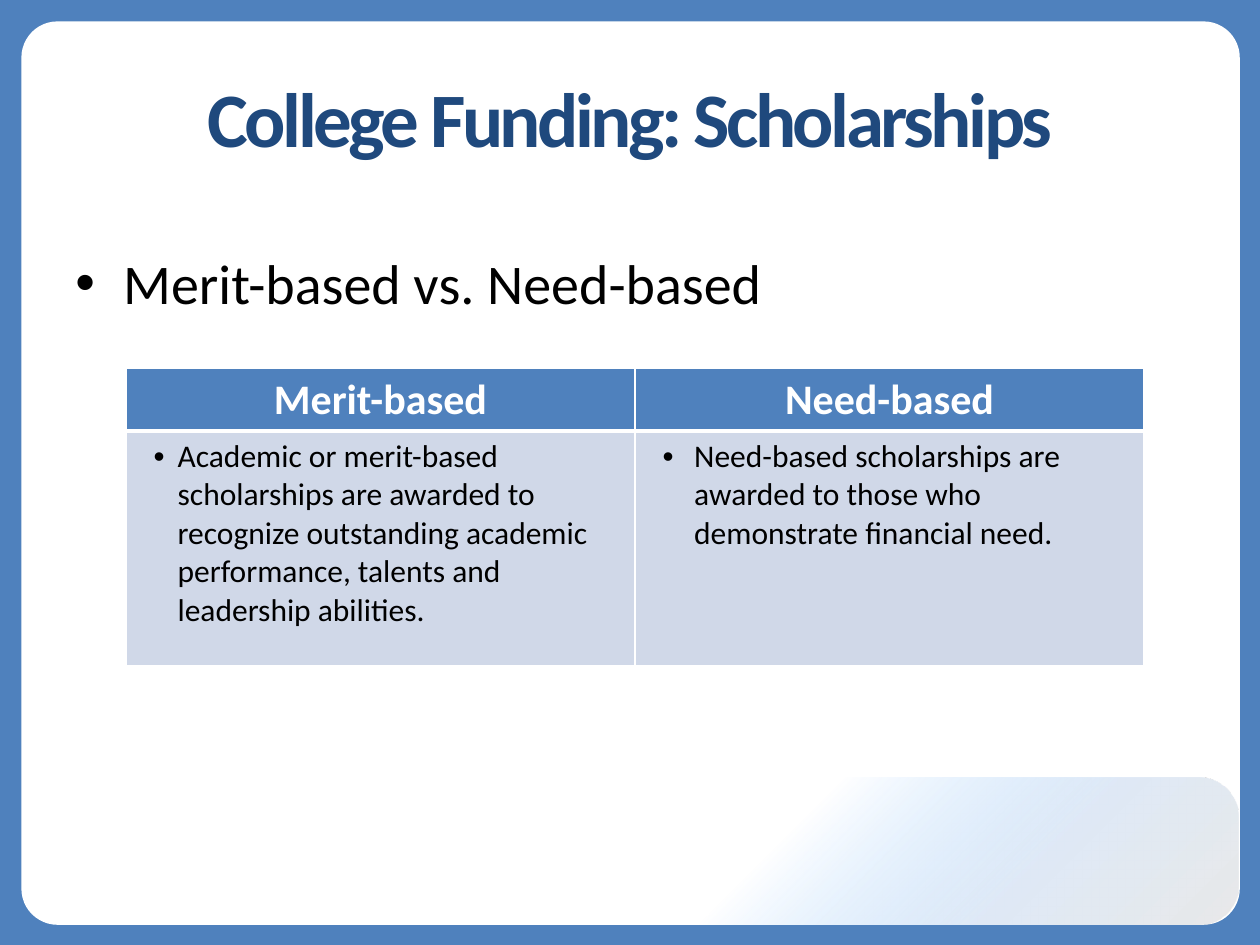
"""Build the scholarships slide comparing merit-based and need-based funding."""
from dataclasses import dataclass
from typing import Optional

from lxml.etree import SubElement
from pptx import Presentation
from pptx.dml.color import RGBColor
from pptx.enum.shapes import MSO_SHAPE as Shape
from pptx.enum.text import MSO_ANCHOR as Anchor, PP_ALIGN as Align
from pptx.oxml import parse_xml
from pptx.oxml.ns import nsdecls, qn
from pptx.util import Inches, Pt

BLUE = RGBColor(0x4F, 0x81, 0xBD)
NAVY = RGBColor(0x1F, 0x49, 0x7D)
PALE = RGBColor(0xD0, 0xD8, 0xE8)
WHITE = RGBColor(0xFF, 0xFF, 0xFF)
BLACK = RGBColor(0, 0, 0)
FONT = "Calibri"
GLOW_STOPS = ((0, "FFFFFF", 0), (40, "85C2FF", 0), (70, "C6D9F1", 56), (100, "D9D9D9", 58))


@dataclass(frozen=True)
class Panel:
    box: tuple
    kind: Shape
    fill: Optional[RGBColor] = None
    radius: Optional[float] = None


@dataclass(frozen=True)
class Style:
    size: int
    color: RGBColor
    bold: bool = False
    align: Align = Align.LEFT


@dataclass(frozen=True)
class Column:
    heading: str
    detail: str
    margin: float
    hang: float


PANELS = (
    Panel((0, 0, 10, 7.5), Shape.RECTANGLE, BLUE),
    Panel((0.17, 0.17, 9.67, 7.17), Shape.ROUNDED_RECTANGLE, WHITE, 0.04),
    Panel((3.83, 6.17, 6, 1.17), Shape.ROUNDED_RECTANGLE, None, 0.27),
)
COLUMNS = (
    Column("Merit-based", "Academic or merit-based scholarships are awarded to recognize "
           "outstanding academic performance, talents and leadership abilities.", 0.31, 0.19),
    Column("Need-based", "Need-based scholarships are awarded to those who demonstrate "
           "financial need.", 0.37, 0.25),
)
TITLE = Style(44, NAVY, True, Align.CENTER)
LEAD = Style(32, BLACK)
HEADING = Style(24, WHITE, True, Align.CENTER)
DETAIL = Style(18, BLACK)


def add_panel(s, panel: Panel) -> None:
    sp = s.shapes.add_shape(panel.kind, *map(Inches, panel.box))
    sp.shadow.inherit = False
    sp.line.fill.background()
    if panel.radius is not None:
        sp.adjustments[0] = panel.radius
    if panel.fill is not None:
        sp.fill.solid()
        sp.fill.fore_color.rgb = panel.fill
        return
    stops = "".join(
        f'<a:gs pos="{pos * 1000}"><a:srgbClr val="{color}"><a:alpha val="{alpha * 1000}"/>'
        "</a:srgbClr></a:gs>" for pos, color, alpha in GLOW_STOPS)
    sp.element.spPr.find(qn("a:prstGeom")).addnext(parse_xml(
        f'<a:gradFill {nsdecls("a")} rotWithShape="1"><a:gsLst>{stops}</a:gsLst>'
        '<a:lin ang="2700000" scaled="0"/></a:gradFill>'))


def write(tf, text: str, style: Style, margin: float = 0, hang: float = 0):
    p = tf.paragraphs[0]
    p.alignment = style.align
    if hang:
        pPr = p._p.get_or_add_pPr()
        pPr.set("marL", str(Inches(margin)))
        pPr.set("indent", str(-Inches(hang)))
        SubElement(pPr, qn("a:buFont"), typeface="Arial")
        SubElement(pPr, qn("a:buChar"), char="•")
    r = p.add_run()
    r.text = text
    for name, value in {"name": FONT, "size": Pt(style.size), "bold": style.bold}.items():
        setattr(r.font, name, value)
    r.font.color.rgb = style.color
    return r


def add_text(s, box: tuple, anchor: Anchor):
    tf = s.shapes.add_textbox(*map(Inches, box)).text_frame
    tf.word_wrap = True
    tf.vertical_anchor = anchor
    return tf


def paint_cell(cell, fill: RGBColor, top: int, bottom: int) -> None:
    tcPr = cell._tc.get_or_add_tcPr()
    for side, width in {"L": 1, "R": 1, "T": top, "B": bottom}.items():
        ln = SubElement(tcPr, qn(f"a:ln{side}"), w=str(Pt(width)))
        SubElement(SubElement(ln, qn("a:solidFill")), qn("a:srgbClr"), val=str(WHITE))
    cell.fill.solid()
    cell.fill.fore_color.rgb = fill


def add_comparison(s) -> None:
    box = map(Inches, (1, 2.92, 8.08, 2.36))
    table = s.shapes.add_table(2, len(COLUMNS), *box).table
    table.first_row = table.horz_banding = False
    for row, height in zip(table.rows, (0.5, 1.86)):
        row.height = Inches(height)
    for i, column in enumerate(COLUMNS):
        head, body = table.cell(0, i), table.cell(1, i)
        paint_cell(head, BLUE, 1, 3)
        paint_cell(body, PALE, 3, 1)
        write(head.text_frame, column.heading, HEADING)
        write(body.text_frame, column.detail, DETAIL, column.margin, column.hang)


def main() -> None:
    prs = Presentation()
    prs.slide_width, prs.slide_height = Inches(10), Inches(7.5)
    s = prs.slides.add_slide(prs.slide_layouts[6])
    for panel in PANELS:
        add_panel(s, panel)
    r = write(add_text(s, (0.5, 0.3, 9, 1.25), Anchor.MIDDLE),
              "College Funding: Scholarships", TITLE)
    r._r.get_or_add_rPr().set("spc", "-200")
    write(add_text(s, (0.5, 1.92, 9, 4.78), Anchor.TOP),
          "Merit-based vs. Need-based", LEAD, 0.38, 0.38)
    add_comparison(s)
    prs.save("out.pptx")


if __name__ == "__main__":
    main()
